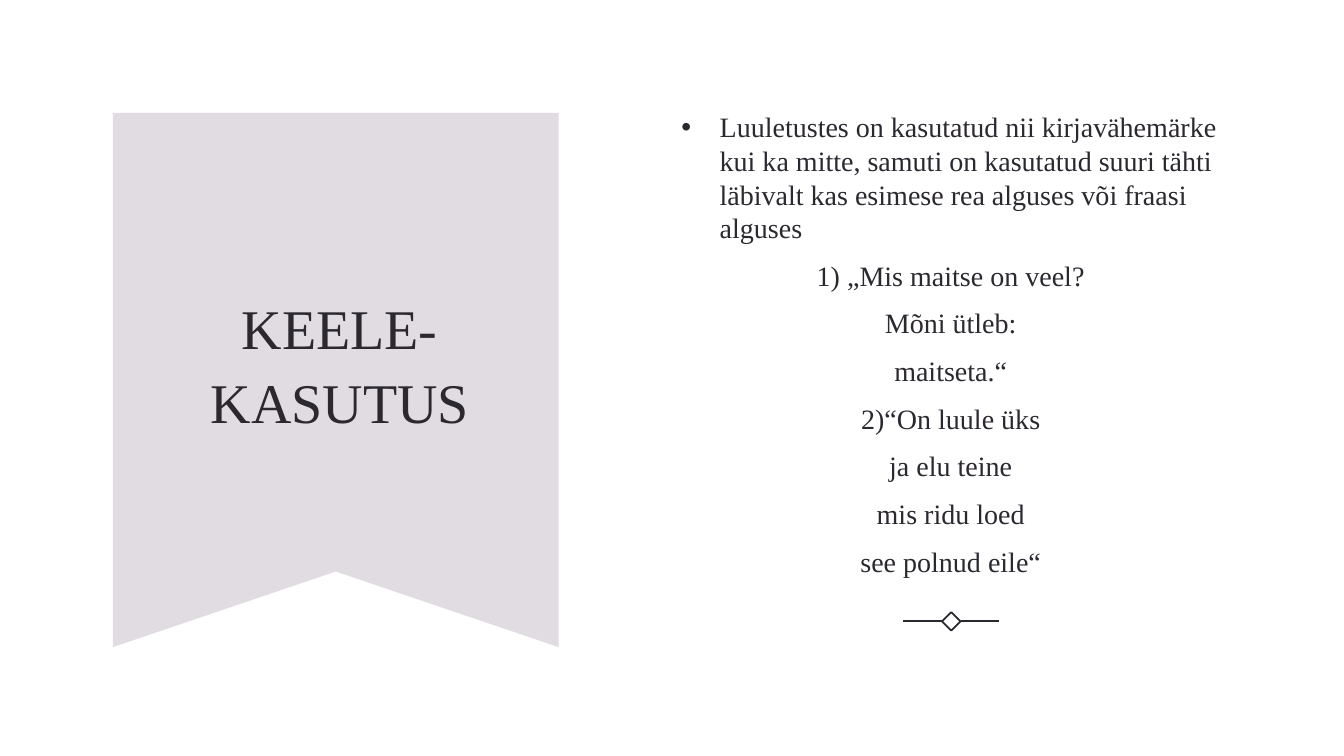
from dataclasses import dataclass

from lxml.etree import SubElement
from pptx import Presentation
from pptx.dml.color import RGBColor
from pptx.enum.shapes import MSO_CONNECTOR, MSO_SHAPE
from pptx.enum.text import MSO_ANCHOR, PP_ALIGN
from pptx.oxml.ns import qn
from pptx.util import Inches, Pt

FONT = "Times New Roman"
INK = "2C2830"
LILAC = "E0DCE1"
LINE_WIDTH = 1.25
ORNAMENT_Y = 6.16


@dataclass
class Dash:
    start: float
    end: float


BANNER = [(1.12, 1.12), (5.54, 1.12), (5.54, 6.42), (3.33, 5.67), (1.12, 6.42)]
DASHES = [Dash(8.96, 9.35), Dash(9.53, 9.91)]
INTRO = (
    "Luuletustes on kasutatud nii kirjavähemärke kui ka mitte, samuti on kasutatud "
    "suuri tähti läbivalt kas esimese rea alguses või fraasi alguses"
)
VERSES = [
    "1) „Mis maitse on veel?",
    "Mõni ütleb:",
    "maitseta.“",
    "2)“On luule üks",
    "ja elu teine",
    "mis ridu loed",
    "see polnud eile“",
]


def color(value: str) -> RGBColor:
    return RGBColor.from_string(value)


def write(para, text: str, *, size: float, align=PP_ALIGN.CENTER,
          spacing: float = 1.0, before: float = 0) -> None:
    para.alignment = align
    para.line_spacing = spacing
    para.space_before = Pt(before)
    span = para.add_run()
    span.text = text
    span.font.name = FONT
    span.font.size = Pt(size)
    span.font.color.rgb = color(INK)


def add_bullet(para) -> None:
    properties = para._p.get_or_add_pPr()
    properties.set("marL", str(Inches(0.38)))
    properties.set("indent", str(-Inches(0.38)))
    SubElement(properties, qn("a:buFont"), typeface="Arial")
    SubElement(properties, qn("a:buChar"), char="•")


def add_banner(page) -> None:
    """Draw the ribbon behind the title."""
    builder = page.shapes.build_freeform(*map(Inches, BANNER[0]), scale=1.0)
    builder.add_line_segments([(Inches(x), Inches(y)) for x, y in BANNER[1:]])
    banner = builder.convert_to_shape()
    banner.shadow.inherit = False
    banner.fill.solid()
    banner.fill.fore_color.rgb = color(LILAC)
    banner.line.fill.background()
    page.shapes.title._element.addprevious(banner._element)


def add_title(page) -> None:
    title = page.shapes.title
    title.left, title.top = Inches(1.54), Inches(1.9)
    title.width, title.height = Inches(3.66), Inches(3.35)
    frame = title.text_frame
    frame.word_wrap = True
    frame.vertical_anchor = MSO_ANCHOR.MIDDLE
    write(frame.paragraphs[0], "KEELE-KASUTUS", size=40, spacing=1.1)


def add_body(page) -> None:
    box = page.shapes.add_textbox(Inches(6.66), Inches(1.09), Inches(5.54), Inches(4.88))
    frame = box.text_frame
    frame.word_wrap = True
    frame.margin_top = 0
    intro = frame.paragraphs[0]
    write(intro, INTRO, size=20, align=PP_ALIGN.LEFT)
    add_bullet(intro)
    for verse in VERSES:
        write(frame.add_paragraph(), verse, size=20, before=10)


def add_ornament(page) -> None:
    diamond = page.shapes.add_shape(
        MSO_SHAPE.RECTANGLE, Inches(9.37), Inches(6.1), Inches(0.13), Inches(0.13))
    diamond.rotation = 45
    diamond.shadow.inherit = False
    diamond.fill.background()
    diamond.line.color.rgb = color(INK)
    diamond.line.width = Pt(LINE_WIDTH)
    for dash in DASHES:
        line = page.shapes.add_connector(
            MSO_CONNECTOR.STRAIGHT, Inches(dash.start), Inches(ORNAMENT_Y),
            Inches(dash.end), Inches(ORNAMENT_Y))
        line.line.color.rgb = color(INK)
        line.line.width = Pt(LINE_WIDTH)
        SubElement(line._element.spPr, qn("a:effectLst"))


def main() -> None:
    deck = Presentation()
    deck.slide_width, deck.slide_height = Inches(13.33), Inches(7.5)
    page = deck.slides.add_slide(deck.slide_layouts[5])
    page.background.fill.solid()
    page.background.fill.fore_color.rgb = color("FFFFFF")
    add_banner(page)
    add_title(page)
    add_body(page)
    add_ornament(page)
    deck.save("out.pptx")


if __name__ == "__main__":
    main()
